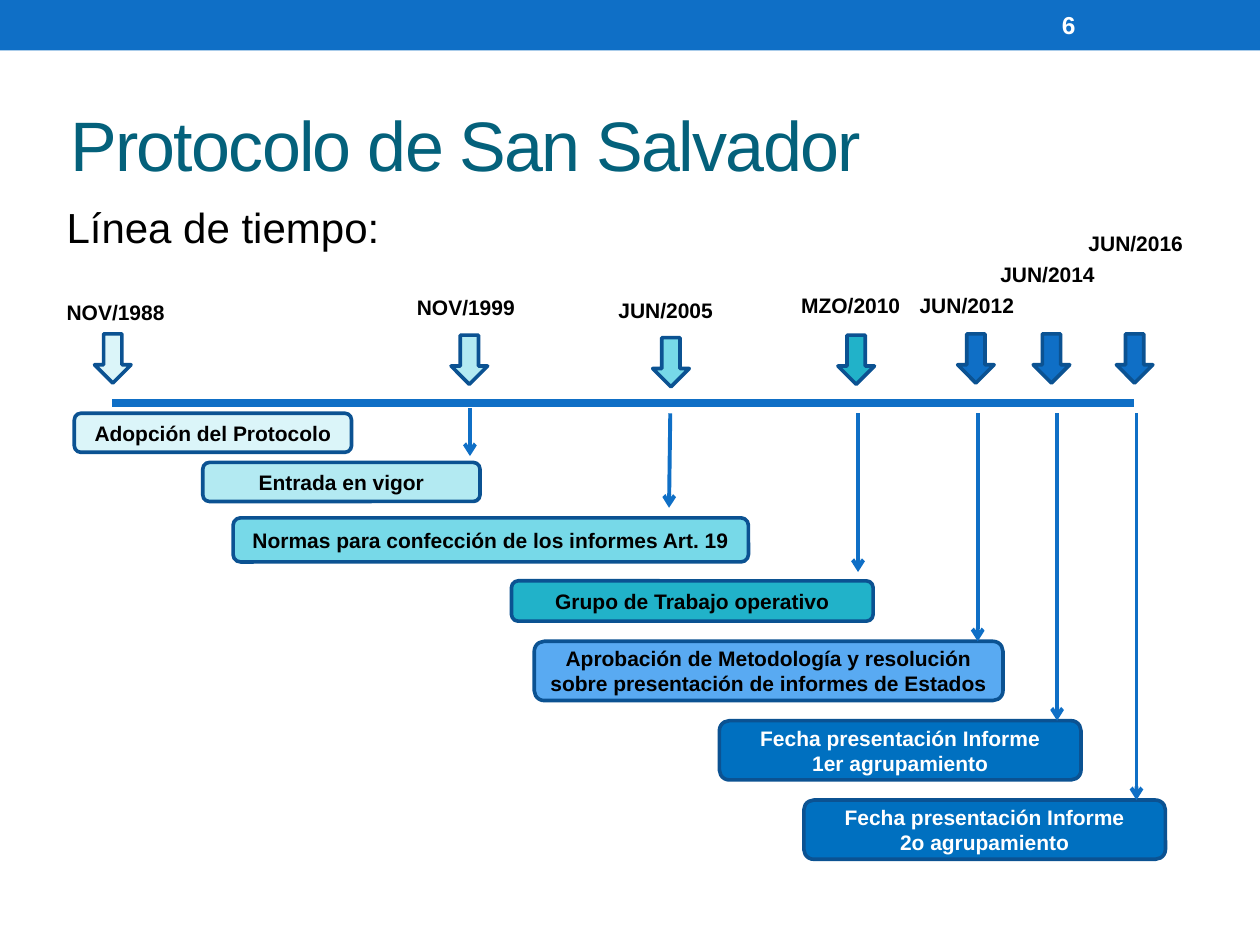
from lxml import etree
from pptx import Presentation
from pptx import util as u
from pptx.dml.color import RGBColor
from pptx.enum import shapes, text
from pptx.oxml.ns import qn

PX = 9144
BLUE, EDGE, BLACK, WHITE = "0F6FC6", "0B5292", "000000", "FFFFFF"
KIND = shapes.MSO_SHAPE
MID = text.MSO_ANCHOR.MIDDLE

EVENTS = [
    ("NOV/1988", (-46, -87), (-14, -55), "DBF5F9", None,
     "Adopción del Protocolo", (-30, 8, 220, 31), "DBF5F9", BLACK),
    ("NOV/1999", (232, -91), (269, -54), "B3EAF2", (284, 4, 284, 42),
     "Entrada en vigor", (72, 47, 220, 31), "B3EAF2", BLACK),
    ("JUN/2005", (392, -89), (429, -52), "77D9E8", (443, 8, 442, 83),
     "Normas para confección de los informes Art. 19",
     (96, 91, 409, 35), "77D9E8", BLACK),
    ("MZO/2010", (537, -93), (576, -54), "21B2C9", (592, 8, 592, 134),
     "Grupo de Trabajo operativo", (317, 141, 287, 32), "21B2C9", BLACK),
    ("JUN/2012", (631, -93), (671, -55), BLUE, (687, 8, 687, 189),
     "Aprobación de Metodología y resolución sobre presentación de "
     "informes de Estados", (335, 189, 372, 47), "59AAF2", BLACK),
    ("JUN/2014", (695, -117), (731, -55), BLUE, (750, 8, 750, 252),
     "Fecha presentación Informe\n1er agrupamiento",
     (482, 252, 287, 47), "0070C0", WHITE),
    ("JUN/2016", (765, -142), (797, -55), BLUE, (813, 8, 813, 315),
     "Fecha presentación Informe\n2o agrupamiento",
     (549, 315, 287, 47), "0070C0", WHITE),
]


def color(code):
    return RGBColor.from_string(code)


def emu(box):
    return [u.Emu(n * PX) for n in box]


def shift(box, dx, dy):
    return (box[0] + dx, box[1] + dy, *box[2:])


def write(shape, words, size=12, ink=BLACK, bold=True, align=None,
          anchor=None, track=None):
    frame = shape.text_frame
    frame.word_wrap = True
    if anchor is not None:
        frame.vertical_anchor = anchor
    frame.text = words
    for para in frame.paragraphs:
        para.alignment = align
        for run in para.runs:
            font = run.font
            font.name, font.size, font.bold = "Arial", u.Pt(size), bold
            font.color.rgb = color(ink)
            if track is not None:
                run._r.get_or_add_rPr().set("spc", str(track))


def label(slide, box, words, **style):
    write(slide.shapes.add_textbox(*emu(box)), words, **style)


def block(slide, kind, box, fill, edge=None):
    shape = slide.shapes.add_shape(kind, *emu(box))
    shape.shadow.inherit = False
    shape.fill.solid()
    shape.fill.fore_color.rgb = color(fill)
    if edge:
        shape.line.color.rgb = color(edge)
        shape.line.width = u.Pt(2.08)
    else:
        shape.line.fill.background()
    return shape


def rule(slide, ends, width, arrow=False):
    line = slide.shapes.add_connector(shapes.MSO_CONNECTOR.STRAIGHT, *emu(ends))
    line.line.color.rgb = color(BLUE)
    line.line.width = u.Pt(width)
    props = line._element.spPr
    if arrow:
        etree.SubElement(props.find(qn("a:ln")), qn("a:tailEnd"), type="arrow")
    etree.SubElement(props, qn("a:effectLst"))


def header(slide, box):
    left, top, width, height = box
    block(slide, KIND.RECTANGLE, (left, top, width, 40), BLUE)
    label(slide, (left + 833, top + 2, 117, 36), "6", size=14, ink=WHITE,
          anchor=MID)
    label(slide, (left + 46, top + 60, 670, 108), "Protocolo de San Salvador",
          size=40, ink="04617B", bold=False, anchor=MID, track=-100)
    label(slide, (left + 43, top + 155, 913, height - 155), "Línea de tiempo:",
          size=24, bold=False)


def event(slide, left, top, date, tag, mark, fill, drop, words, box, tint, ink):
    block(slide, KIND.DOWN_ARROW, shift((*mark, 29, 39), left, top), fill, EDGE)
    label(slide, shift((*tag, 102, 30), left, top), date)
    note = block(slide, KIND.ROUNDED_RECTANGLE, shift(box, left, top), tint, EDGE)
    write(note, words, ink=ink, align=text.PP_ALIGN.CENTER, anchor=MID)
    if drop:
        x1, y1, x2, y2 = drop
        rule(slide, (left + x1, top + y1, left + x2, top + y2), 2.25, arrow=True)


def timeline(slide, left, top, width):
    rule(slide, (left, top, left + width, top), 4.5)
    for row in EVENTS:
        event(slide, left, top, *row)


def main():
    deck = Presentation()
    deck.slide_width, deck.slide_height = emu((1000, 750))
    slide = deck.slides.add_slide(deck.slide_layouts[6])
    header(slide, (0, 0, 1000, 210))
    timeline(slide, 89, 320, 811)
    deck.save("out.pptx")


if __name__ == "__main__":
    main()
